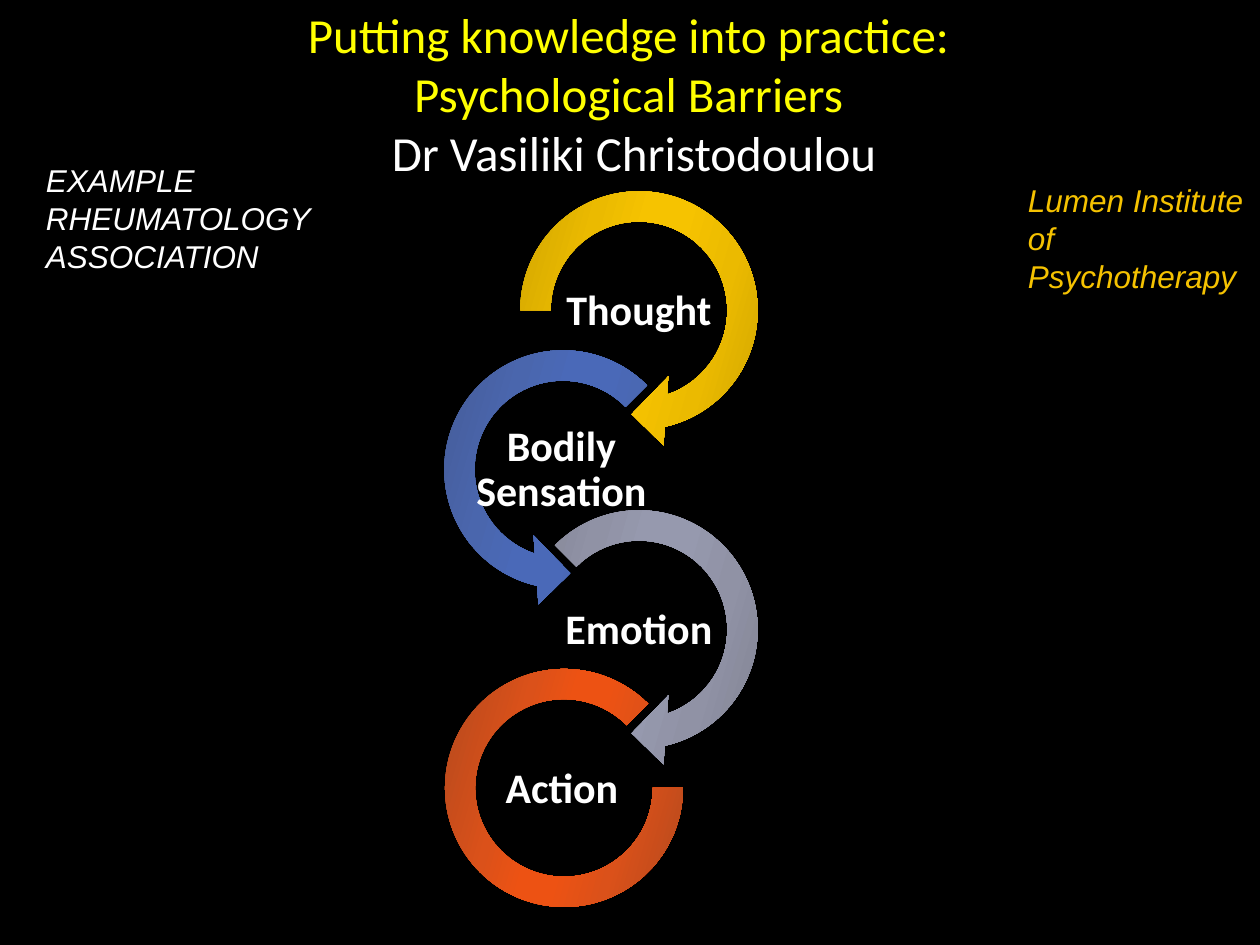
"""Build a slide showing a chain of four psychological barriers."""
from dataclasses import dataclass

from lxml import etree
from pptx import Presentation
from pptx.dml.color import RGBColor
from pptx.enum.shapes import MSO_SHAPE
from pptx.enum.text import MSO_ANCHOR, MSO_AUTO_SIZE, PP_ALIGN
from pptx.oxml.ns import qn
from pptx.slide import Slide
from pptx.util import Emu, Pt

RIGHT_ARROW = MSO_SHAPE.CIRCULAR_ARROW
LEFT_ARROW = MSO_SHAPE.LEFT_CIRCULAR_ARROW
BLOCK_ARC = MSO_SHAPE.BLOCK_ARC
TOP, MIDDLE, BOTTOM = MSO_ANCHOR.TOP, MSO_ANCHOR.MIDDLE, MSO_ANCHOR.BOTTOM
LEFT, CENTER = PP_ALIGN.LEFT, PP_ALIGN.CENTER
GROW, FIXED = MSO_AUTO_SIZE.SHAPE_TO_FIT_TEXT, MSO_AUTO_SIZE.NONE

BLACK = RGBColor(0x00, 0x00, 0x00)
WHITE = RGBColor(0xFF, 0xFF, 0xFF)
YELLOW = RGBColor(0xFF, 0xFF, 0x00)
GOLD = RGBColor(0xF5, 0xC2, 0x01)
GOLD_SHADES = RGBColor(0xC8, 0x9F, 0x01), RGBColor(0xEB, 0xBA, 0x00), RGBColor(0xF6, 0xC3, 0x00)
BLUE_SHADES = RGBColor(0x43, 0x59, 0x90), RGBColor(0x4A, 0x66, 0xAD), RGBColor(0x4A, 0x69, 0xB8)
GREY_SHADES = RGBColor(0x7C, 0x7E, 0x8D), RGBColor(0x90, 0x92, 0xA5), RGBColor(0x96, 0x99, 0xAE)
ORANGE_SHADES = RGBColor(0xB4, 0x49, 0x1D), RGBColor(0xDB, 0x51, 0x1A), RGBColor(0xED, 0x52, 0x13)

GRADIENT_STOPS = (0, 30, 45, 55, 73, 100)
GRADIENT_ANGLE = 344
FIRST_LABEL_TOP = 273
TWO_STEPS = 319
LABEL_HEIGHT = 77


def px(length: int) -> Emu:
    """Turn pixels into EMU at 126 pixels to the inch."""
    return Emu(round(length * 914400 / 126))


@dataclass(frozen=True)
class Box:
    """A rectangle in pixels."""
    left: int
    top: int
    width: int
    height: int

    def emu(self) -> tuple[Emu, ...]:
        """Return the rectangle in EMU."""
        return tuple(px(n) for n in (self.left, self.top, self.width, self.height))


@dataclass(frozen=True)
class Stage:
    """One ring of the chain; ring_rise is its distance above the label."""
    label: str
    label_left: int
    label_width: int
    preset: MSO_SHAPE
    ring_left: int
    ring_rise: int
    ring_width: int
    ring_height: int
    adjustments: tuple[float, ...]
    shades: tuple[RGBColor, ...]


STAGES = (
    Stage("Thought", 562, 154, RIGHT_ARROW, 501, 101, 276, 277,
          (0.11, 11.42, 45, 108, 0.125), GOLD_SHADES),
    Stage("Bodily Sensation", 467, 189, LEFT_ARROW, 425, 101, 276, 277,
          (0.11, 11.42, 63, 189, 0.125), BLUE_SHADES),
    Stage("Emotion", 562, 154, RIGHT_ARROW, 501, 101, 276, 277,
          (0.11, 11.42, 45, 135, 0.125), GREY_SHADES),
    Stage("Action", 485, 154, BLOCK_ARC, 445, 82, 238, 238,
          (0, 189, 0.127), ORANGE_SHADES),
)


def add_text(slide: Slide, box: Box, *lines: tuple[str, RGBColor], size: int,
             font: str = "Calibri", bold: bool = False, italic: bool = False,
             align: PP_ALIGN = CENTER, anchor: MSO_ANCHOR = MIDDLE,
             fit: MSO_AUTO_SIZE = FIXED, spacing: float = 1.0,
             insets: tuple[int, int, int, int] = (2, 2, 2, 2)) -> None:
    """Add one paragraph whose coloured lines are parted by line breaks."""
    frame = slide.shapes.add_textbox(*box.emu()).text_frame
    frame.word_wrap = True
    frame.auto_size = fit
    frame.vertical_anchor = anchor
    (frame.margin_left, frame.margin_top,
     frame.margin_right, frame.margin_bottom) = (px(n) for n in insets)
    paragraph = frame.paragraphs[0]
    paragraph.alignment = align
    paragraph.line_spacing = spacing
    for index, (text, color) in enumerate(lines):
        if index:
            paragraph.add_line_break()
        run = paragraph.add_run()
        run.text = text
        run.font.name = font
        run.font.size = Pt(size)
        run.font.bold = bold
        run.font.italic = italic
        run.font.color.rgb = color


def add_ring(slide: Slide, stage: Stage, box: Box) -> None:
    """Add a ring with a mirrored gradient of three shades."""
    ring = slide.shapes.add_shape(stage.preset, *box.emu())
    ring.shadow.inherit = False
    ring.line.fill.background()
    for index, value in enumerate(stage.adjustments):
        ring.adjustments[index] = value
    ring.fill.gradient()
    ring.fill.gradient_angle = GRADIENT_ANGLE
    stops = ring.fill._xPr.find(qn("a:gradFill")).find(qn("a:gsLst"))
    for stop in list(stops):
        stops.remove(stop)
    for position, shade in zip(GRADIENT_STOPS, stage.shades + stage.shades[::-1]):
        stop = etree.SubElement(stops, qn("a:gs"), pos=str(position * 1000))
        etree.SubElement(stop, qn("a:srgbClr"), val=str(shade))


def main() -> None:
    """Build and save the slide."""
    presentation = Presentation()
    presentation.slide_width, presentation.slide_height = px(1260), px(945)
    slide = presentation.slides.add_slide(presentation.slide_layouts[6])
    slide.background.fill.solid()
    slide.background.fill.fore_color.rgb = BLACK

    for index, stage in enumerate(STAGES):
        top = FIRST_LABEL_TOP + TWO_STEPS * index // 2
        add_ring(slide, stage, Box(stage.ring_left, top - stage.ring_rise,
                                   stage.ring_width, stage.ring_height))
        add_text(slide, Box(stage.label_left, top, stage.label_width, LABEL_HEIGHT),
                 (stage.label, WHITE), size=24, bold=True, spacing=0.9)

    add_text(slide, Box(105, 125, 1058, 147),
             ("Putting knowledge into practice: ", YELLOW),
             ("Psychological Barriers ", YELLOW),
             ("Dr Vasiliki Christodoulou", WHITE),
             size=28, anchor=BOTTOM, insets=(13, 6, 13, 91))
    for box, name, color in (
        (Box(35, 155, 354, 126), "EXAMPLE RHEUMATOLOGY ASSOCIATION", WHITE),
        (Box(1017, 175, 252, 126), "Lumen Institute of Psychotherapy", GOLD),
    ):
        add_text(slide, box, (name, color), size=18, font="Arial", italic=True,
                 align=LEFT, anchor=TOP, fit=GROW, insets=(11, 6, 11, 6))
    presentation.save("out.pptx")


if __name__ == "__main__":
    main()
